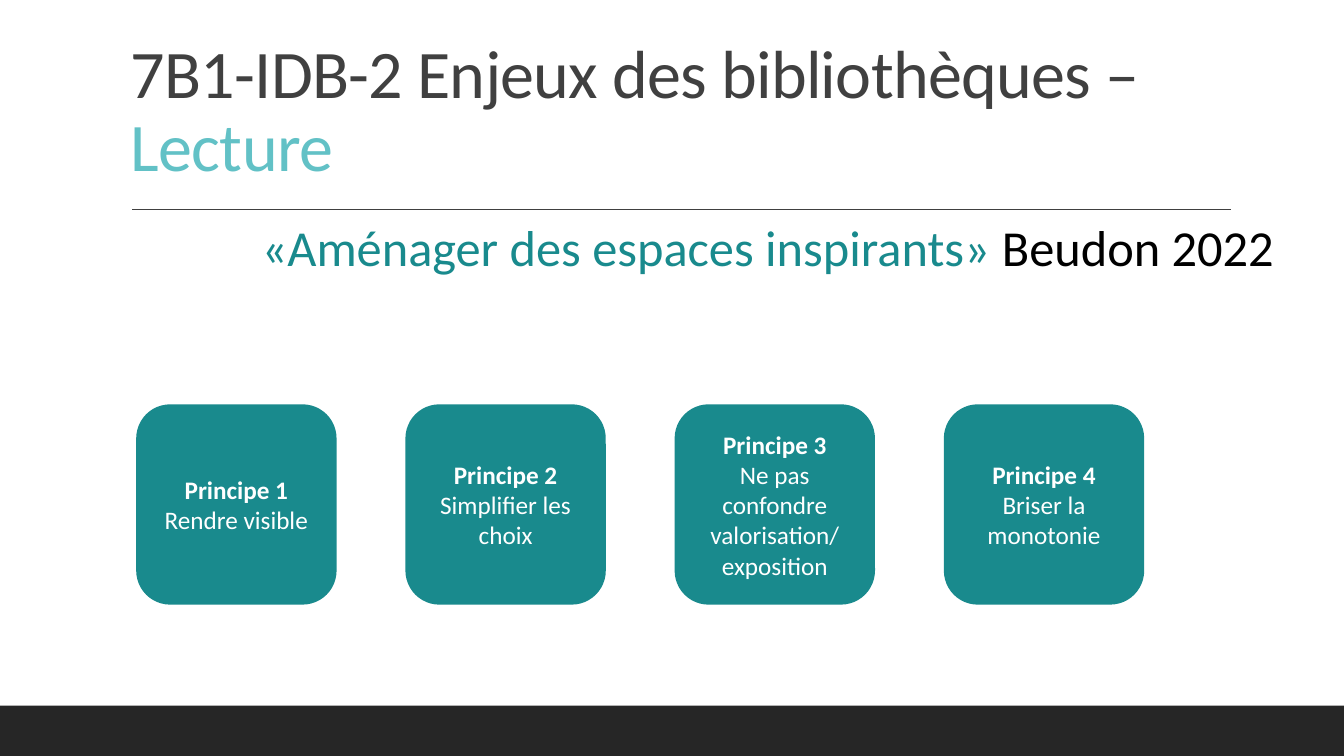
import pptx
import pptx.util
import pptx.dml.color
import pptx.enum.shapes
import pptx.enum.text
import pptx.oxml.ns
import lxml.etree

Inches = pptx.util.Inches
Pt = pptx.util.Pt
RGBColor = pptx.dml.color.RGBColor
Shape = pptx.enum.shapes.MSO_SHAPE
Align = pptx.enum.text.PP_ALIGN
Anchor = pptx.enum.text.MSO_ANCHOR

TEAL = RGBColor(0x19, 0x8A, 0x8D)
AQUA = RGBColor(0x62, 0xC1, 0xC6)
GREY = RGBColor(0x40, 0x40, 0x40)
DARK = RGBColor(0x26, 0x26, 0x26)
BLACK = RGBColor(0, 0, 0)
WHITE = RGBColor(0xFF, 0xFF, 0xFF)

FONT = "Calibri"
TITLE = [("7B1-IDB-2 Enjeux des bibliothèques – ", GREY), ("Lecture", AQUA)]
SOURCE = [("«Aménager des espaces inspirants» ", TEAL), ("Beudon 2022", BLACK)]
CARDS = [
    ("Principe 1", "Rendre visible"),
    ("Principe 2", "Simplifier les choix"),
    ("Principe 3", "Ne pas confondre valorisation/ exposition"),
    ("Principe 4", "Briser la monotonie"),
]
WIDTH, HEIGHT = 13.33, 7.5
LEFT, TOP, SIDE, STEP = 1.36, 4.02, 1.97, 2.67


def style(run, size, color, bold=False):
    run.font.name = FONT
    run.font.size = Pt(size)
    run.font.color.rgb = color
    run.font.bold = bold


def add_text(slide, box, parts, size):
    frame = slide.shapes.add_textbox(*map(Inches, box)).text_frame
    frame.word_wrap = True
    para = frame.paragraphs[0]
    for text, color in parts:
        run = para.add_run()
        run.text = text
        style(run, size, color)
    return frame


def add_block(slide, kind, box, color):
    block = slide.shapes.add_shape(kind, *map(Inches, box))
    block.shadow.inherit = False
    block.fill.solid()
    block.fill.fore_color.rgb = color
    return block


def add_card(slide, left, lines):
    card = add_block(slide, Shape.ROUNDED_RECTANGLE, (left, TOP, SIDE, SIDE), TEAL)
    card.line.color.rgb = TEAL
    card.line.width = Pt(1.25)
    frame = card.text_frame
    frame.word_wrap = True
    frame.vertical_anchor = Anchor.MIDDLE
    frame.text = "\n".join(lines)
    for row, para in enumerate(frame.paragraphs):
        para.alignment = Align.CENTER
        style(para.runs[0], 18, WHITE, row == 0)


def main():
    deck = pptx.Presentation()
    deck.slide_width, deck.slide_height = Inches(WIDTH), Inches(HEIGHT)
    slide = deck.slides.add_slide(deck.slide_layouts[6])

    band = add_block(slide, Shape.RECTANGLE, (0, 7, WIDTH, 0.5), DARK)
    band.line.fill.background()

    rule = slide.shapes.add_connector(
        pptx.enum.shapes.MSO_CONNECTOR.STRAIGHT,
        *map(Inches, (1.31, 2.08, 12.21, 2.08)))
    rule.line.color.rgb = GREY
    rule.line.width = Pt(1)
    lxml.etree.SubElement(rule._element.spPr, pptx.oxml.ns.qn("a:effectLst"))

    title = add_text(slide, (1.2, 0.31, 11, 1.59), TITLE, 48.6)
    title.vertical_anchor = Anchor.BOTTOM
    title.paragraphs[0].line_spacing = 0.9
    for run in title.paragraphs[0].runs:
        run.font._element.set("spc", "-50")

    source = add_text(slide, (2.42, 2.09, 10.39, 1.31), SOURCE, 36)
    source.paragraphs[0].alignment = Align.CENTER

    for col, lines in enumerate(CARDS):
        add_card(slide, LEFT + col * STEP, lines)

    deck.save("out.pptx")


if __name__ == "__main__":
    main()
